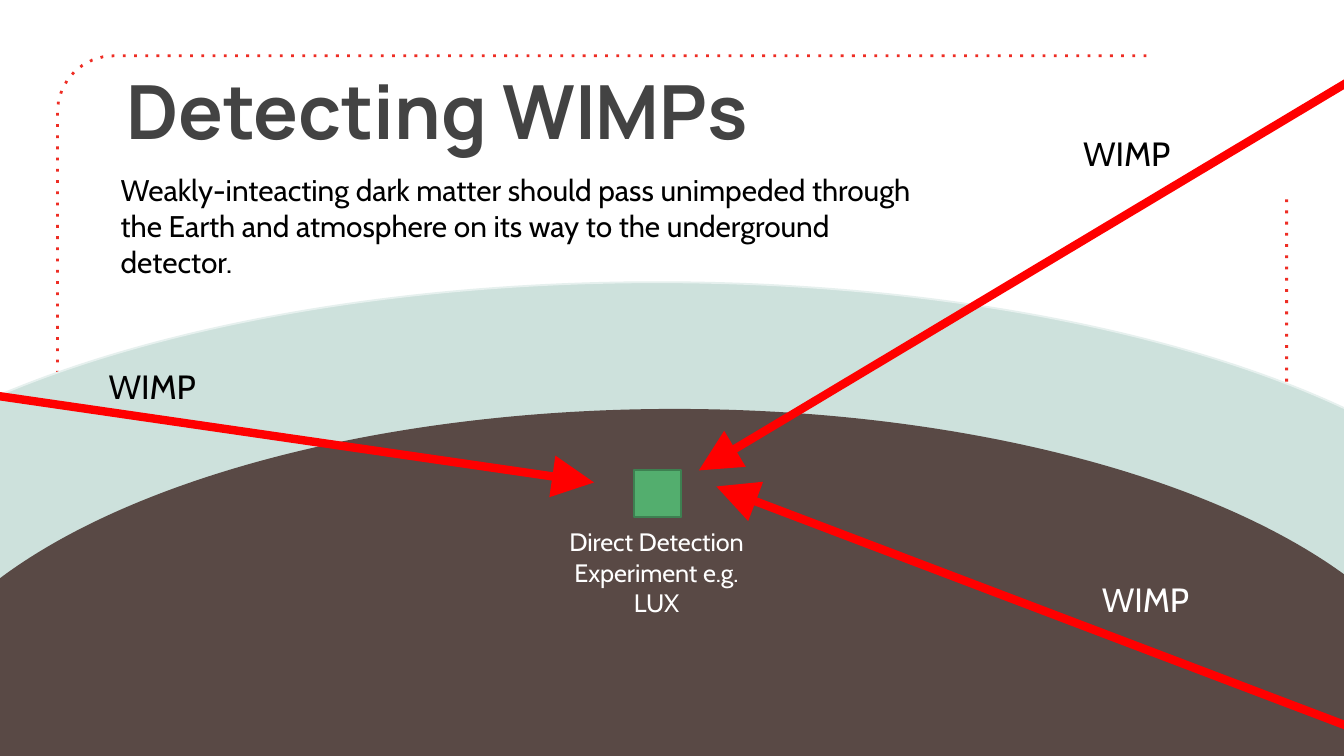
from math import cos, radians, sin

from lxml.etree import SubElement
from pptx import Presentation
from pptx.dml.color import RGBColor
from pptx.enum.shapes import MSO_CONNECTOR, MSO_SHAPE
from pptx.enum.text import MSO_ANCHOR, MSO_AUTO_SIZE, PP_ALIGN
from pptx.oxml.ns import qn
from pptx.util import Inches, Pt

COLUMNS, ROWS = 100, 56.25  # square grid cells
CELL = Inches(0.1)
DOTTED_RED, WIMP_RED = "EE2D24", "FF0000"
AIR, AIR_EDGE = "CDE1DC", "E6F0EE"
EARTH = "594945"
DETECTOR, DETECTOR_EDGE = "53AE6E", "3D8151"
BLACK, WHITE, TITLE_GREY = "000000", "FFFFFF", "434343"

LAYERS = [
    (MSO_SHAPE.OVAL, (-17.9, 21, 133.6, 52.6), AIR, AIR_EDGE),
    (MSO_SHAPE.OVAL, (-7.9, 30.5, 116.2, 50.8), EARTH, EARTH),
    (MSO_SHAPE.RECTANGLE, (47.2, 35, 3.5, 3.5), DETECTOR, DETECTOR_EDGE),
]
WIMP_TRACKS = [
    ((101.8, 5.2), (52, 35)),
    ((112.3, 58.6), (53.3, 36.2)),
    ((-14.4, 27.4), (44.2, 35.9)),
]
WIMP_LABELS = [(79.6, 9.4, BLACK), (81, 42.6, WHITE), (7.1, 26.7, BLACK)]
EXPLANATION = [
    "Weakly-inteacting dark matter should pass unimpeded through",
    "the Earth and atmosphere on its way to the underground detector.",
]
DETECTOR_LABEL = ["Direct Detection", "Experiment e.g. LUX"]


def grid(*cells):
    return [round(cell * CELL) for cell in cells]


def rgb(hex_colour):
    return RGBColor.from_string(hex_colour)


def set_line(line, colour, points):
    line.color.rgb = rgb(colour)
    line.width = Pt(points)


def add_line_detail(shape, tag, **values):
    """Append an element such as a dash or an arrowhead to a set line."""
    outline = shape._element.spPr.find(qn("a:ln"))
    SubElement(outline, qn(tag), values)


def corner(centre_x, centre_y, radius, start, steps=8):
    """Points of a quarter turn, running anticlockwise from start degrees."""
    angles = [radians(start - 90 * step / steps) for step in range(steps + 1)]
    return [(centre_x + radius * cos(a), centre_y + radius * sin(a)) for a in angles]


def add_dotted_frame(slide):
    left, top, right, bottom, radius = 4.27, 4.15, 95.73, 52.1, 4.2
    near, far = left + radius, right - radius
    high, low = top + radius, bottom - radius
    points = [
        *corner(near, high, radius, 270),
        *corner(near, low, radius, 180),
        *corner(far, low, radius, 90),
        (right, 14.6),
    ]
    builder = slide.shapes.build_freeform(*grid(85.3, top), scale=1.0)
    builder.add_line_segments([grid(*point) for point in points], close=False)
    frame = builder.convert_to_shape()
    frame.shadow.inherit = False
    frame.fill.background()
    set_line(frame.line, DOTTED_RED, 1.5)
    add_line_detail(frame, "a:prstDash", val="dot")


def add_layer(slide, kind, box, fill, edge):
    layer = slide.shapes.add_shape(kind, *grid(*box))
    layer.shadow.inherit = False
    layer.fill.solid()
    layer.fill.fore_color.rgb = rgb(fill)
    set_line(layer.line, edge, 1)


def add_track(slide, start, end):
    track = slide.shapes.add_connector(
        MSO_CONNECTOR.STRAIGHT, *grid(*start), *grid(*end))
    set_line(track.line, WIMP_RED, 4.5)
    add_line_detail(track, "a:tailEnd", type="triangle", w="lg", len="lg")
    SubElement(track._element.spPr, qn("a:effectLst"))


def write(frame, lines, size, colour, name="Cabin", bold=False,
          align=PP_ALIGN.LEFT, wrap=True, anchor=MSO_ANCHOR.TOP):
    layout = {"word_wrap": wrap, "auto_size": MSO_AUTO_SIZE.NONE,
              "vertical_anchor": anchor}
    for attribute, value in layout.items():
        setattr(frame, attribute, value)
    frame.text = "\n".join(lines)
    for paragraph in frame.paragraphs:
        paragraph.alignment = align
        paragraph.font.color.rgb = rgb(colour)
        font_format = {"size": Pt(size), "name": name, "bold": bold}
        for attribute, value in font_format.items():
            setattr(paragraph.font, attribute, value)


def add_text(slide, box, lines, size, colour, **options):
    text_box = slide.shapes.add_textbox(*grid(*box))
    write(text_box.text_frame, lines, size, colour, **options)


def set_title(slide, box, text):
    title = slide.shapes.title
    for side, value in zip(("left", "top", "width", "height"), grid(*box)):
        setattr(title, side, value)
    write(title.text_frame, [text], 40, TITLE_GREY, name="Manrope", bold=True,
          wrap=False, anchor=MSO_ANCHOR.MIDDLE)


def main():
    deck = Presentation()
    deck.slide_width, deck.slide_height = grid(COLUMNS, ROWS)
    slide = deck.slides.add_slide(deck.slide_layouts.get_by_name("Title Only"))

    add_dotted_frame(slide)
    for layer in LAYERS:
        add_layer(slide, *layer)
    for start, end in WIMP_TRACKS:
        add_track(slide, start, end)
    for left, top, colour in WIMP_LABELS:
        add_text(slide, (left, top, 8.5, 4), ["WIMP"], 18, colour, wrap=False)
    add_text(slide, (8, 12.3, 63, 6.4), EXPLANATION, 16, BLACK)
    add_text(slide, (39.9, 38.7, 17.9, 5.6), DETECTOR_LABEL, 13.5, WHITE,
             align=PP_ALIGN.CENTER)
    set_title(slide, (8.4, 4.3, 49.1, 7.7), "Detecting WIMPs")

    deck.save("out.pptx")


if __name__ == "__main__":
    main()
